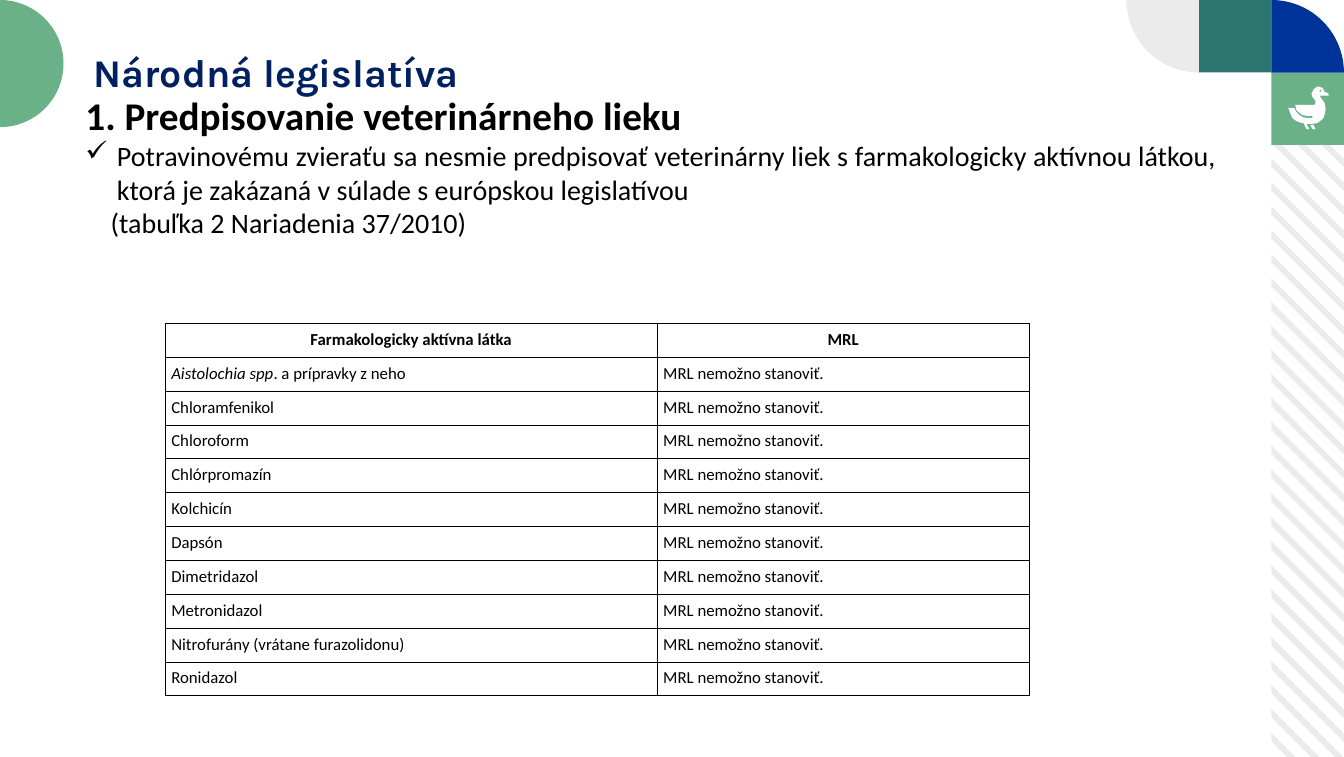
import math
from dataclasses import dataclass

import pptx
import pptx.dml.color
import pptx.enum.shapes
import pptx.enum.text
import pptx.oxml
import pptx.oxml.ns
import pptx.util

Pt = pptx.util.Pt
ALIGN = pptx.enum.text.PP_ALIGN


@dataclass(frozen=True)
class Theme:
    green: str = "6BB188"
    teal: str = "2C7470"
    blue: str = "003399"
    navy: str = "002060"
    grey: str = "ECEBEB"
    white: str = "FFFFFF"
    black: str = "000000"
    title_font: str = "Karla"
    body_font: str = "Calibri"
    heading_size: int = 28
    body_size: int = 20
    table_size: int = 12


THEME = Theme()
WIDTH, HEIGHT = 960, 540.7
TILE = 51.8
STRIPE_LEFT, STRIPE_TOP = WIDTH - TILE, 2 * TILE
STRIPE_COUNT, STRIPE_FIRST, STRIPE_STEP, STRIPE_DEPTH = 28, 61.8, 17.1, 6

DUCK_LEFT, DUCK_TOP, DUCK_UNIT = 920.2, 61.9, 0.72
DUCK_FOOT = [(27, 42), (25, 38), (24, 38), (22, 38), (24, 42)]
DUCK_BODY = [
    (40, 7), (36, 5), (35, 3), (34, 1), (33, 1), (33, 4), (33, 5), (32, 5), (31, 5),
    (31, 4), (32, 3), (33, 3), (33, 4), (33, 1), (31, 0), (29, 0), (27, 1), (25, 3),
    (24, 5), (23, 7), (24, 10), (27, 14), (27, 17), (26, 18), (25, 18), (7, 18), (8, 23),
    (11, 26), (14, 28), (18, 29), (24, 29), (24, 31), (18, 31), (14, 30), (11, 28),
    (8, 25), (6, 21), (0, 21), (2, 26), (4, 31), (8, 34), (13, 36), (15, 36), (18, 42),
    (21, 42), (18, 37), (24, 37), (29, 36), (33, 33), (35, 31), (36, 28), (37, 23),
    (37, 21), (36, 16), (31, 9), (40, 9),
]

LIMIT = "MRL nemožno stanoviť."
SUBSTANCES = [
    "Chloramfenikol", "Chloroform", "Chlórpromazín", "Kolchicín", "Dapsón",
    "Dimetridazol", "Metronidazol", "Nitrofurány (vrátane furazolidonu)", "Ronidazol",
]


def rgb(color):
    return pptx.dml.color.RGBColor.from_string(color)


def paint(shape, color):
    shape.shadow.inherit = False
    shape.fill.solid()
    shape.fill.fore_color.rgb = rgb(color)
    shape.line.fill.background()


def add_outline(slide, contours, color):
    """Draw one filled shape from closed contours given in points."""
    builder = None
    for contour in contours:
        start, *rest = [(Pt(x), Pt(y)) for x, y in contour]
        if builder is None:
            builder = slide.shapes.build_freeform(*start, scale=1.0)
        else:
            builder.move_to(*start)
        builder.add_line_segments(rest, close=True)
    paint(builder.convert_to_shape(), color)


def add_sector(slide, x, y, radius, first, last, color):
    """Draw a circle sector; angles run clockwise from the right, in degrees."""
    angles = [math.radians(a) for a in range(first, last + 1, 3)]
    arc = [(x + radius * math.cos(a), y + radius * math.sin(a)) for a in angles]
    add_outline(slide, [[(x, y)] + arc], color)


def add_tile(slide, x, y, color):
    tile = slide.shapes.add_shape(
        pptx.enum.shapes.MSO_SHAPE.RECTANGLE, Pt(x), Pt(y), Pt(TILE), Pt(TILE))
    paint(tile, color)


def stripe(offset):
    """Return a 45° band clipped to the striped column."""
    def edge(y):
        run_start = max(0, STRIPE_TOP - y)
        run_end = min(TILE, HEIGHT - y)
        return [(STRIPE_LEFT + run, y + run) for run in (run_start, run_end)]
    return edge(offset) + edge(offset + STRIPE_DEPTH)[::-1]


def add_decoration(slide):
    offsets = [STRIPE_FIRST + i * STRIPE_STEP for i in range(STRIPE_COUNT)]
    add_outline(slide, [stripe(offset) for offset in offsets], THEME.grey)
    add_tile(slide, WIDTH - 2 * TILE, 0, THEME.teal)
    add_tile(slide, WIDTH - TILE, TILE, THEME.green)
    add_sector(slide, WIDTH - TILE, TILE, TILE, -90, 0, THEME.blue)
    add_sector(slide, WIDTH - 2 * TILE, 0, TILE, 90, 180, THEME.grey)
    duck = [[(DUCK_LEFT + DUCK_UNIT * x, DUCK_TOP + DUCK_UNIT * y) for x, y in part]
            for part in (DUCK_FOOT, DUCK_BODY)]
    add_outline(slide, duck, THEME.white)
    add_sector(slide, 0, 45.4, 45.4, -90, 90, THEME.green)


def add_frame(slide, x, y, width, height):
    frame = slide.shapes.add_textbox(Pt(x), Pt(y), Pt(width), Pt(height)).text_frame
    frame.word_wrap = True
    return frame


def write(paragraph, text, *, size, font=THEME.body_font, color=THEME.black, bold=False,
          italic=False, align=None, spacing=None, indent=0, hanging=0, bullet=None):
    """Append a run to the paragraph and format both."""
    properties = paragraph._p.get_or_add_pPr()
    if indent:
        properties.set("marL", str(Pt(indent)))
        properties.set("indent", str(-Pt(hanging)))
    if bullet:
        mark = pptx.oxml.parse_xml(
            f'<a:buChar {pptx.oxml.ns.nsdecls("a")} char="{bullet}"/>')
        properties.append(mark)
    if align is not None:
        paragraph.alignment = align
    if spacing:
        paragraph.line_spacing = spacing
    run = paragraph.add_run()
    run.text = text
    run.font.name = font
    run.font.size = Pt(size)
    run.font.bold = bold
    run.font.italic = italic
    run.font.color.rgb = rgb(color)


def add_texts(slide):
    title = add_frame(slide, 59.8, 24.5, 745, 37.4)
    write(title.paragraphs[0], "Národná legislatíva", size=THEME.heading_size,
          font=THEME.title_font, color=THEME.navy, bold=True, spacing=1.2)
    body = add_frame(slide, 54, 61.9, 822, 120)
    write(body.paragraphs[0], "1. Predpisovanie veterinárneho lieku",
          size=THEME.heading_size, bold=True)
    write(body.add_paragraph(),
          "Potravinovému zvieraťu sa nesmie predpisovať veterinárny liek s farmakologicky "
          "aktívnou látkou, ktorá je zakázaná v súlade s európskou legislatívou",
          size=THEME.body_size, align=ALIGN.JUSTIFY, indent=22.5, hanging=22.5, bullet="✓")
    write(body.add_paragraph(), "(tabuľka 2 Nariadenia 37/2010)",
          size=THEME.body_size, align=ALIGN.JUSTIFY, indent=18)


def format_cell(cell):
    cell.margin_left = cell.margin_right = cell.margin_top = cell.margin_bottom = Pt(4.3)
    for side in ("lnL", "lnR", "lnT", "lnB"):
        cell._tc.get_or_add_tcPr().append(pptx.oxml.parse_xml(
            f'<a:{side} {pptx.oxml.ns.nsdecls("a")} w="{Pt(0.5)}"><a:solidFill>'
            f'<a:srgbClr val="{THEME.black}"/></a:solidFill></a:{side}>'))
    cell.fill.solid()
    cell.fill.fore_color.rgb = rgb(THEME.white)


def add_limits_table(slide):
    header = ["Farmakologicky aktívna látka", "MRL"]
    plant = [("Aistolochia spp", True), (". a prípravky z neho", False)]
    rows = [header, [plant, LIMIT]] + [[name, LIMIT] for name in SUBSTANCES]
    widths, row_height = [351.4, 265.6], 24.2
    table = slide.shapes.add_table(
        len(rows), len(widths), Pt(118.1), Pt(231), Pt(sum(widths)),
        Pt(row_height * len(rows))).table
    table.first_row = table.horz_banding = False
    for column, width in zip(table.columns, widths):
        column.width = Pt(width)
    for r, row in enumerate(rows):
        table.rows[r].height = Pt(row_height)
        for c, content in enumerate(row):
            cell = table.cell(r, c)
            format_cell(cell)
            runs = [(content, False)] if isinstance(content, str) else content
            for text, italic in runs:
                write(cell.text_frame.paragraphs[0], text, size=THEME.table_size,
                      bold=r == 0, italic=italic,
                      align=ALIGN.CENTER if r == 0 else ALIGN.LEFT)


def main():
    deck = pptx.Presentation()
    deck.slide_width, deck.slide_height = Pt(WIDTH), Pt(HEIGHT)
    slide = deck.slides.add_slide(deck.slide_layouts[6])
    add_decoration(slide)
    add_texts(slide)
    add_limits_table(slide)
    deck.save("out.pptx")


if __name__ == "__main__":
    main()
